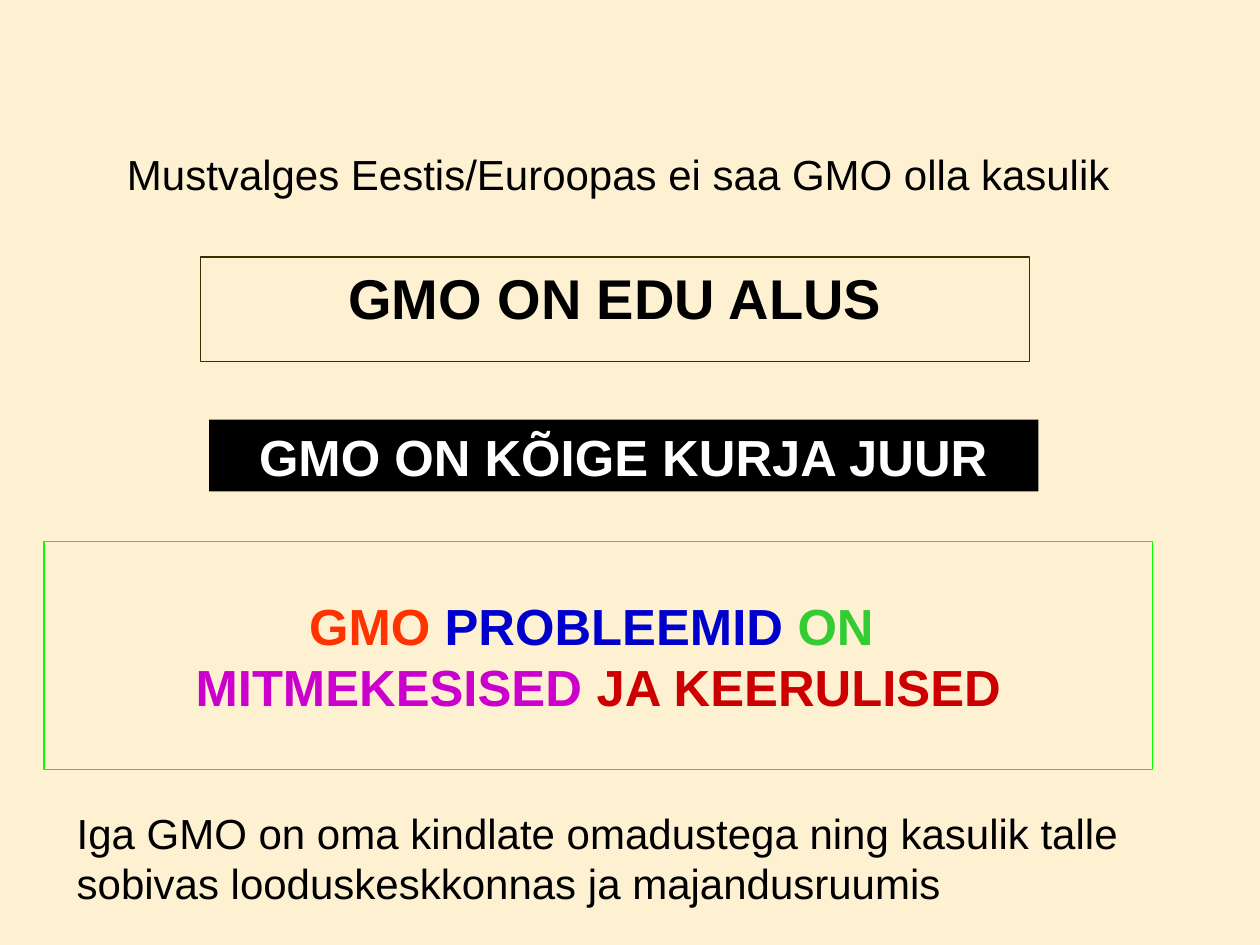
from pptx import Presentation
from pptx.dml.color import RGBColor
from pptx.enum import text
from pptx.util import Pt

CREAM = RGBColor(0xFD, 0xF1, 0xD2)
BLACK = RGBColor(0, 0, 0)
WHITE = RGBColor(0xFF, 0xFF, 0xFF)
OLIVE = RGBColor(0x33, 0x33, 0x00)
LIME = RGBColor(0x00, 0xFF, 0x00)
ORANGE = RGBColor(0xFF, 0x33, 0x00)
BLUE = RGBColor(0x00, 0x00, 0xCC)
GREEN = RGBColor(0x33, 0xCC, 0x33)
MAGENTA = RGBColor(0xCC, 0x00, 0xCC)
RED = RGBColor(0xCC, 0x00, 0x00)

# Content: coloured title lines, then statements
TITLE_BOX = (25.2, 309.6, 633.6, 130.3)
TITLE_LINES = [
    [("GMO ", ORANGE), ("PROBLEEMID ", BLUE), ("ON ", GREEN)],
    [("MITMEKESISED ", MAGENTA), ("JA KEERULISED", RED)],
]
# text, box, size, bold and centred, text colour, fill, line
STATEMENTS = [
    ("GMO ON EDU ALUS", (114.5, 146.9, 473.8, 59.8), 32, True, BLACK, None, OLIVE),
    ("GMO ON KÕIGE KURJA JUUR", (119.5, 239.8, 473.8, 41), 29, True, WHITE, BLACK, None),
    ("Mustvalges Eestis/Euroopas ei saa GMO olla kasulik",
     (65.5, 81.4, 578.2, 36), 24, False, BLACK, None, None),
    ("Iga GMO on oma kindlate omadustega ning kasulik talle "
     "sobivas looduskeskkonnas ja majandusruumis",
     (36.7, 457.9, 668.9, 64.8), 24, False, BLACK, None, None),
]


def format_run(run, size, bold, color):
    run.font.name = "Arial"
    run.font.size = Pt(size)
    run.font.bold = bold
    run.font.color.rgb = color


def outline(shape, color):
    shape.line.color.rgb = color
    shape.line.width = Pt(0.75)


presentation = Presentation()
presentation.slide_width, presentation.slide_height = Pt(720), Pt(540)
slide = presentation.slides.add_slide(presentation.slide_layouts[5])
slide.background.fill.solid()
slide.background.fill.fore_color.rgb = CREAM

# Title
title = slide.shapes.title
title.left, title.top, title.width, title.height = map(Pt, TITLE_BOX)
outline(title, LIME)
title.text_frame.word_wrap = True
title.text_frame.auto_size = text.MSO_AUTO_SIZE.NONE
title.text_frame.vertical_anchor = text.MSO_ANCHOR.MIDDLE
paragraph = title.text_frame.paragraphs[0]
paragraph.alignment = text.PP_ALIGN.CENTER
for index, line in enumerate(TITLE_LINES):
    if index:
        paragraph.add_line_break()
    for words, color in line:
        run = paragraph.add_run()
        run.text = words
        format_run(run, 29, True, color)

# Statements
for words, box, size, strong, color, fill, line in STATEMENTS:
    shape = slide.shapes.add_textbox(*map(Pt, box))
    if fill is not None:
        shape.fill.solid()
        shape.fill.fore_color.rgb = fill
    if line is not None:
        outline(shape, line)
    shape.text_frame.word_wrap = True
    shape.text_frame.text = words
    paragraph = shape.text_frame.paragraphs[0]
    paragraph.alignment = text.PP_ALIGN.CENTER if strong else text.PP_ALIGN.LEFT
    format_run(paragraph.runs[0], size, strong, color)

presentation.save("out.pptx")
